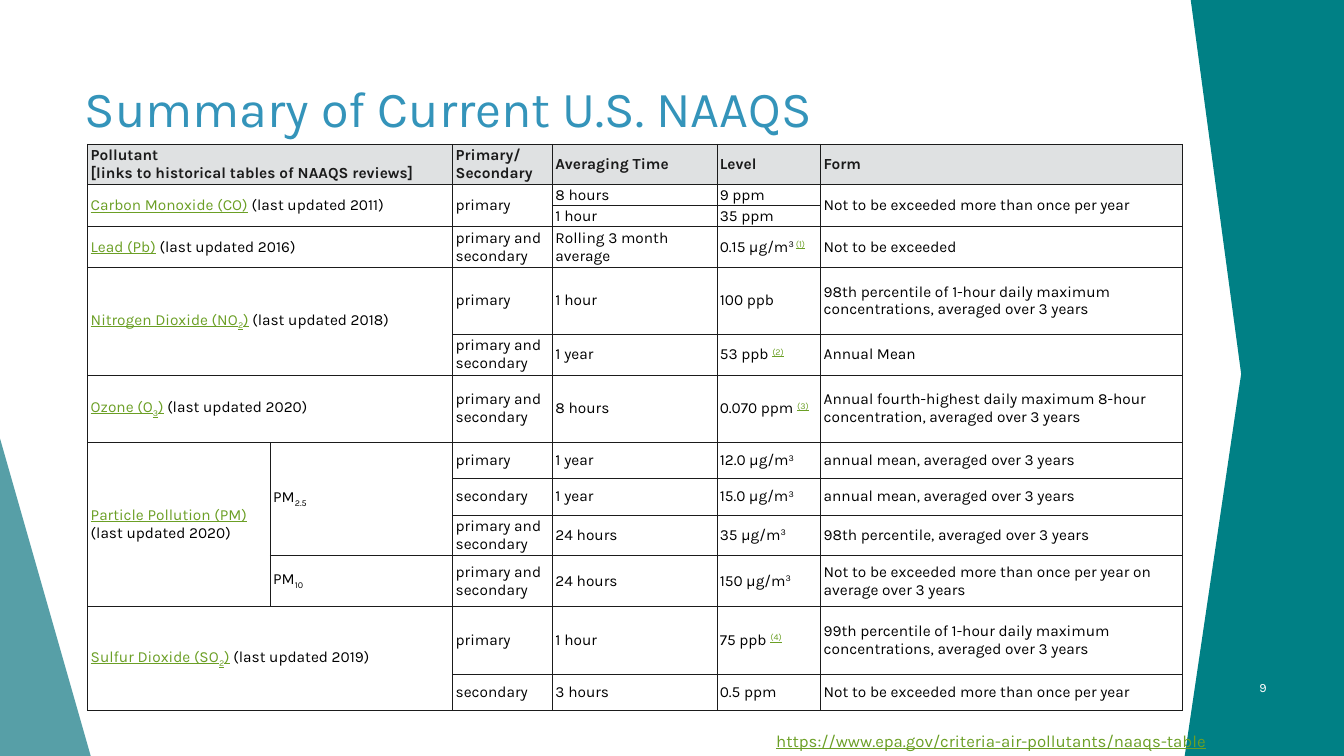
"""Build the slide that sums up the current U.S. NAAQS in one table."""
import pptx
import pptx.dml.color
import pptx.enum.shapes
import pptx.enum.text
import pptx.oxml
import pptx.oxml.ns
import pptx.util

Inches = pptx.util.Inches
Pt = pptx.util.Pt
RGBColor = pptx.dml.color.RGBColor
ALIGN = pptx.enum.text.PP_ALIGN
ANCHOR = pptx.enum.text.MSO_ANCHOR

FONT = "Karla"
BLUE = RGBColor(0x34, 0x94, 0xBA)
TEAL = RGBColor(0x00, 0x80, 0x85)
MIST = RGBColor(0x3A, 0x8F, 0x98)
GREEN = RGBColor(0x6B, 0x9F, 0x25)
INK = RGBColor(0x1B, 0x1B, 0x1B)
GREY = RGBColor(0xDF, 0xE1, 0xE2)
BLACK = RGBColor(0, 0, 0)
WHITE = RGBColor(255, 255, 255)

LINK = {"color": GREEN, "under": True}
SUB, SUP = {"base": -25}, {"base": 30}
NOTE, LOW = LINK | SUP, LINK | SUB

TITLE = "Summary of Current U.S. NAAQS"
NUMBER = "9"
SOURCE = "https://www.epa.gov/criteria-air-pollutants/naaqs-table"
BOTH = "primary and\nsecondary"
ONCE = "Not to be exceeded more than once per year"
MEAN = "annual mean, averaged over 3 years"
DAILY = "percentile of 1-hour daily maximum concentrations, averaged over 3 years"
CUBE = ("3", SUP)

ROWS = [
    ["Pollutant\n[links to historical tables of NAAQS reviews]", None,
     "Primary/\nSecondary", "Averaging Time", "Level", "Form"],
    [[("Carbon Monoxide (CO)", LINK), " (last updated 2011)"], None,
     "primary", "8 hours", "9 ppm", ONCE],
    [None, None, None, "1 hour", "35 ppm", None],
    [[("Lead (Pb)", LINK), " (last updated 2016)"], None, BOTH,
     "Rolling 3 month average", ["0.15 μg/m", ("3 ", SUP), ("(1)", NOTE)],
     "Not to be exceeded"],
    [[("Nitrogen Dioxide (NO", LINK), ("2", LOW), (")", LINK), " (last updated 2018)"],
     None, "primary", "1 hour", "100 ppb", "98th " + DAILY],
    [None, None, BOTH, "1 year", ["53 ppb ", ("(2)", NOTE)], "Annual Mean"],
    [[("Ozone (O", LINK), ("3", LOW), (")", LINK), " (last updated 2020)"],
     None, BOTH, "8 hours", ["0.070 ppm ", ("(3)", NOTE)],
     "Annual fourth-highest daily maximum 8-hour concentration, averaged over 3 years"],
    [[("Particle Pollution (PM)", LINK), " (last updated 2020)"],
     ["PM", ("2.5", SUB)], "primary", "1 year", ["12.0 μg/m", CUBE], MEAN],
    [None, None, "secondary", "1 year", ["15.0 μg/m", CUBE], MEAN],
    [None, None, BOTH, "24 hours", ["35 μg/m", CUBE],
     "98th percentile, averaged over 3 years"],
    [None, ["PM", ("10", SUB)], BOTH, "24 hours", ["150 μg/m", CUBE],
     ONCE + " on average over 3 years"],
    [[("Sulfur Dioxide (SO", LINK), ("2", LOW), (")", LINK), " (last updated 2019)"],
     None, "primary", "1 hour", ["75 ppb ", ("(4)", NOTE)], "99th " + DAILY],
    [None, None, "secondary", "3 hours", "0.5 ppm", ONCE],
]
SPANS = {(0, 0): (1, 2), (1, 0): (2, 2), (1, 2): (2, 1), (1, 5): (2, 1),
         (3, 0): (1, 2), (4, 0): (2, 2), (6, 0): (1, 2), (7, 0): (4, 1),
         (7, 1): (3, 1), (11, 0): (2, 2)}
WIDTHS = [1.81, 1.81, 0.99, 1.63, 1.03, 3.59]
HEIGHTS = [0.4, 0.21, 0.21, 0.4, 0.67, 0.4, 0.67, 0.36, 0.36, 0.4, 0.51, 0.67, 0.36]
BAND = [(13.33, 0), (13.33, 7.5), (11.75, 7.5), (12.31, 3.71), (11.81, 0)]


def write(frame, text, size=11, color=BLACK, bold=False, under=False,
          align=ALIGN.LEFT, anchor=ANCHOR.TOP):
    """Put a string, or a list of strings and (string, format) pairs, in a frame."""
    frame.word_wrap = True
    frame.vertical_anchor = anchor
    line = frame.paragraphs[0]
    line.alignment = align
    for part in [text] if isinstance(text, str) else text:
        words, look = (part, {}) if isinstance(part, str) else part
        for i, piece in enumerate(words.split("\n")):
            if i:
                line.add_line_break()
            run = line.add_run()
            run.text = piece
            font = run.font
            font.name, font.size, font.bold = FONT, Pt(size), bold
            font.underline = look.get("under", under)
            font.color.rgb = look.get("color", color)
            if "base" in look:
                run._r.get_or_add_rPr().set("baseline", str(look["base"] * 1000))


def label(slide, box, text, **look):
    """Add a text box."""
    write(slide.shapes.add_textbox(*map(Inches, box)).text_frame, text, **look)


def paint(shape, color):
    """Give a shape a flat fill with no outline."""
    shape.shadow.inherit = False
    shape.fill.solid()
    shape.fill.fore_color.rgb = color
    shape.line.fill.background()


def frame_cell(cell):
    """Draw thin lines on the four sides of a cell."""
    props = cell._tc.get_or_add_tcPr()
    space = pptx.oxml.ns.nsdecls("a")
    for i, side in enumerate("LRTB"):
        props.insert(i, pptx.oxml.parse_xml(
            f'<a:ln{side} {space} w="{Pt(0.5)}"><a:solidFill>'
            f'<a:srgbClr val="{INK}"/></a:solidFill></a:ln{side}>'))


def add_sides(slide):
    """Draw the coloured shapes on both edges."""
    wedge = slide.shapes.add_shape(
        pptx.enum.shapes.MSO_SHAPE.RIGHT_TRIANGLE,
        *map(Inches, (-0.02, 4.28, 0.92, 3.22)))
    paint(wedge, MIST)
    tint = wedge._element.spPr.find(".//" + pptx.oxml.ns.qn("a:srgbClr"))
    tint.append(pptx.oxml.parse_xml(
        f'<a:alpha {pptx.oxml.ns.nsdecls("a")} val="85000"/>'))
    first, *rest = [(Inches(x), Inches(y)) for x, y in BAND]
    form = slide.shapes.build_freeform(*first, scale=1.0)
    form.add_line_segments(rest, close=True)
    paint(form.convert_to_shape(), TEAL)


def add_grid(slide):
    """Add the table of standards."""
    box = (0.87, 1.43, sum(WIDTHS), sum(HEIGHTS))
    grid = slide.shapes.add_table(
        len(ROWS), len(WIDTHS), *map(Inches, box)).table
    grid.first_row = grid.horz_banding = False
    for col, width in zip(grid.columns, WIDTHS):
        col.width = Inches(width)
    for row, height in zip(grid.rows, HEIGHTS):
        row.height = Inches(height)
    for r, row in enumerate(ROWS):
        for c, text in enumerate(row):
            cell = grid.cell(r, c)
            head = r == 0
            cell.margin_left = cell.margin_right = Inches(0.03)
            cell.margin_top = cell.margin_bottom = Inches(0.01)
            cell.fill.solid()
            cell.fill.fore_color.rgb = GREY if head else WHITE
            frame_cell(cell)
            if text:
                write(cell.text_frame, text, bold=head, color=INK if head else BLACK)
                cell.vertical_anchor = ANCHOR.MIDDLE
    for (r, c), (down, across) in SPANS.items():
        grid.cell(r, c).merge(grid.cell(r + down - 1, c + across - 1))


def main():
    """Build and save the deck."""
    deck = pptx.Presentation()
    deck.slide_width, deck.slide_height = Inches(13.33), Inches(7.5)
    slide = deck.slides.add_slide(deck.slide_layouts[6])
    add_sides(slide)
    label(slide, (0.74, 0.67, 11.92, 0.8), TITLE, size=36, color=BLUE,
          anchor=ANCHOR.MIDDLE)
    label(slide, (11.91, 6.62, 0.75, 0.4), NUMBER, size=9, color=WHITE,
          align=ALIGN.RIGHT, anchor=ANCHOR.MIDDLE)
    add_grid(slide)
    label(slide, (7.6, 7.2, 4.8, 0.5), SOURCE, size=12, color=GREEN, under=True)
    deck.save("out.pptx")


if __name__ == "__main__":
    main()
